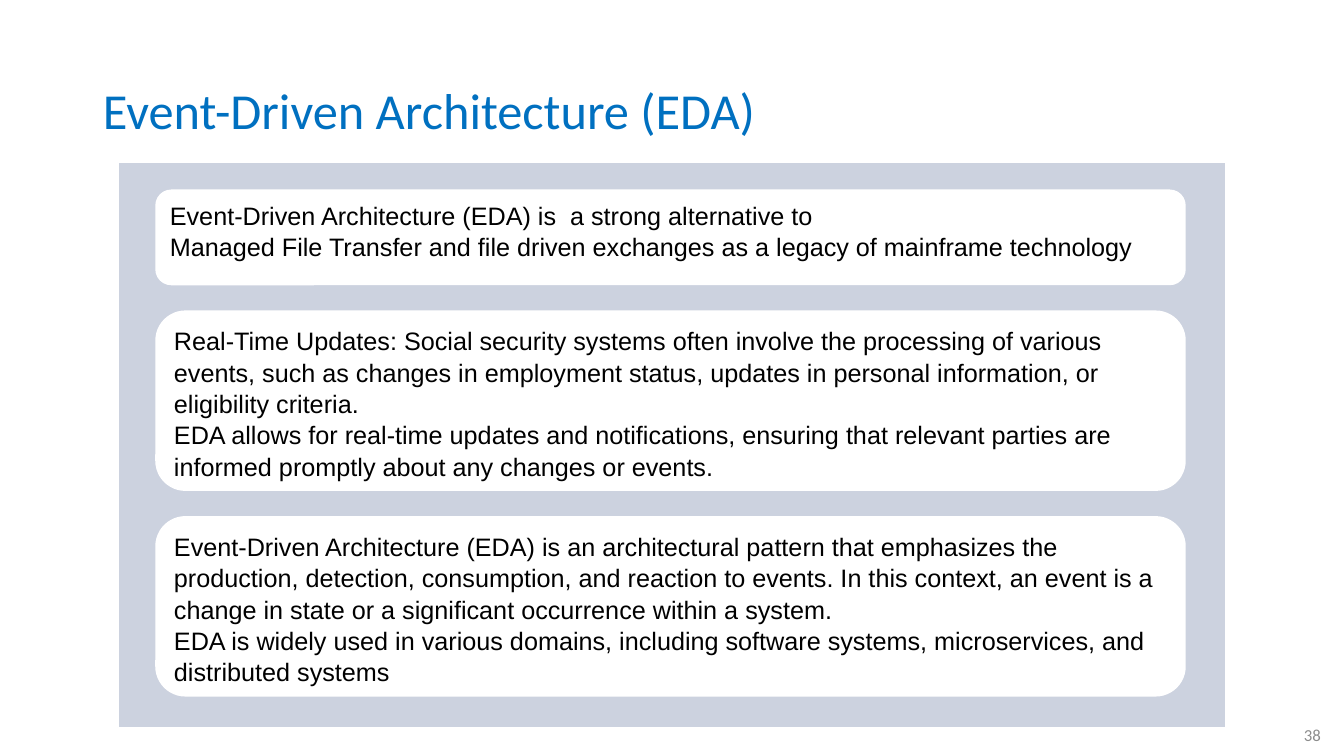
from lxml.etree import SubElement
from pptx import Presentation
from pptx.dml.color import RGBColor
from pptx.enum.shapes import MSO_SHAPE
from pptx.enum.text import MSO_ANCHOR, PP_ALIGN
from pptx.oxml.ns import qn
from pptx.util import Inches, Pt

LEFT, WIDTH, GAP = 1.54, 10.22, 0.25
CARDS = [
    (0.95, ["Event-Driven Architecture (EDA) is  a strong alternative to",
            "Managed File Transfer and file driven exchanges as a legacy of "
            "mainframe technology"]),
    (1.79, ["Real-Time Updates: Social security systems often involve the "
            "processing of various events, such as changes in employment "
            "status, updates in personal information, or eligibility criteria.",
            "EDA allows for real-time updates and notifications, ensuring that "
            "relevant parties are informed promptly about any changes or events."]),
    (1.79, ["Event-Driven Architecture (EDA) is an architectural pattern that "
            "emphasizes the production, detection, consumption, and reaction to "
            "events. In this context, an event is a change in state or a "
            "significant occurrence within a system.",
            "EDA is widely used in various domains, including software systems, "
            "microservices, and distributed systems"]),
]


def color(code):
    return RGBColor.from_string(code)


class Deck:
    head = dict(font="Calibri", size=36, ink="0070C0", space=0.9)
    body = dict(font="Arial", size=18, ink="000000", space=1.04)
    foot = dict(font="Calibri", size=12, ink="8C8C8C", align=PP_ALIGN.RIGHT)

    def __init__(self, show):
        self.slide = show.slides.add_slide(show.slide_layouts[5])

    def label(self, shape, lines, anchor, font, size, ink,
              space=1.0, align=PP_ALIGN.LEFT):
        frame = shape.text_frame
        frame.word_wrap = True
        frame.vertical_anchor = anchor
        for i, line in enumerate(lines):
            para = frame.add_paragraph() if i else frame.paragraphs[0]
            para.alignment = align
            para.line_spacing = space
            run = para.add_run()
            run.text = line
            run.font.name = font
            run.font.size = Pt(size)
            run.font.color.rgb = color(ink)

    def title(self, text, x, y, w, h):
        shape = self.slide.shapes.title
        shape.left, shape.top = Inches(x), Inches(y)
        shape.width, shape.height = Inches(w), Inches(h)
        self.label(shape, [text], MSO_ANCHOR.MIDDLE, **self.head)

    def block(self, kind, x, y, w, h, fill):
        shape = self.slide.shapes.add_shape(
            kind, Inches(x), Inches(y), Inches(w), Inches(h))
        shape.shadow.inherit = False
        shape.fill.solid()
        shape.fill.fore_color.rgb = color(fill)
        shape.line.fill.background()
        return shape

    def panel(self, x, y, w, h):
        """Draw the backdrop, navy at 20 % opacity with a white edge."""
        shape = self.block(MSO_SHAPE.RECTANGLE, x, y, w, h, "002060")
        tint = shape.element.spPr.find(qn("a:solidFill"))[0]
        SubElement(tint, qn("a:alpha"), val="20000")
        shape.line.color.rgb = color("FFFFFF")
        shape.line.width = Pt(1)

    def card(self, lines, x, y, w, h):
        shape = self.block(MSO_SHAPE.ROUNDED_RECTANGLE, x, y, w, h, "FFFFFF")
        self.label(shape, lines, MSO_ANCHOR.TOP, **self.body)

    def number(self, text, x, y, w, h):
        box = self.slide.shapes.add_textbox(
            Inches(x), Inches(y), Inches(w), Inches(h))
        self.label(box, [text], MSO_ANCHOR.MIDDLE, **self.foot)


def main():
    show = Presentation()
    show.slide_width, show.slide_height = Inches(13.33), Inches(7.5)
    deck = Deck(show)
    deck.title("Event-Driven Architecture (EDA)", 0.92, 0.4, 11.5, 1.45)
    deck.panel(1.17, 1.61, 10.99, 5.61)
    top = 1.88
    for high, lines in CARDS:
        deck.card(lines, LEFT, top, WIDTH, high)
        top += high + GAP
    deck.number("38", 10.2, 7.09, 3, 0.4)
    show.save("out.pptx")


if __name__ == "__main__":
    main()
